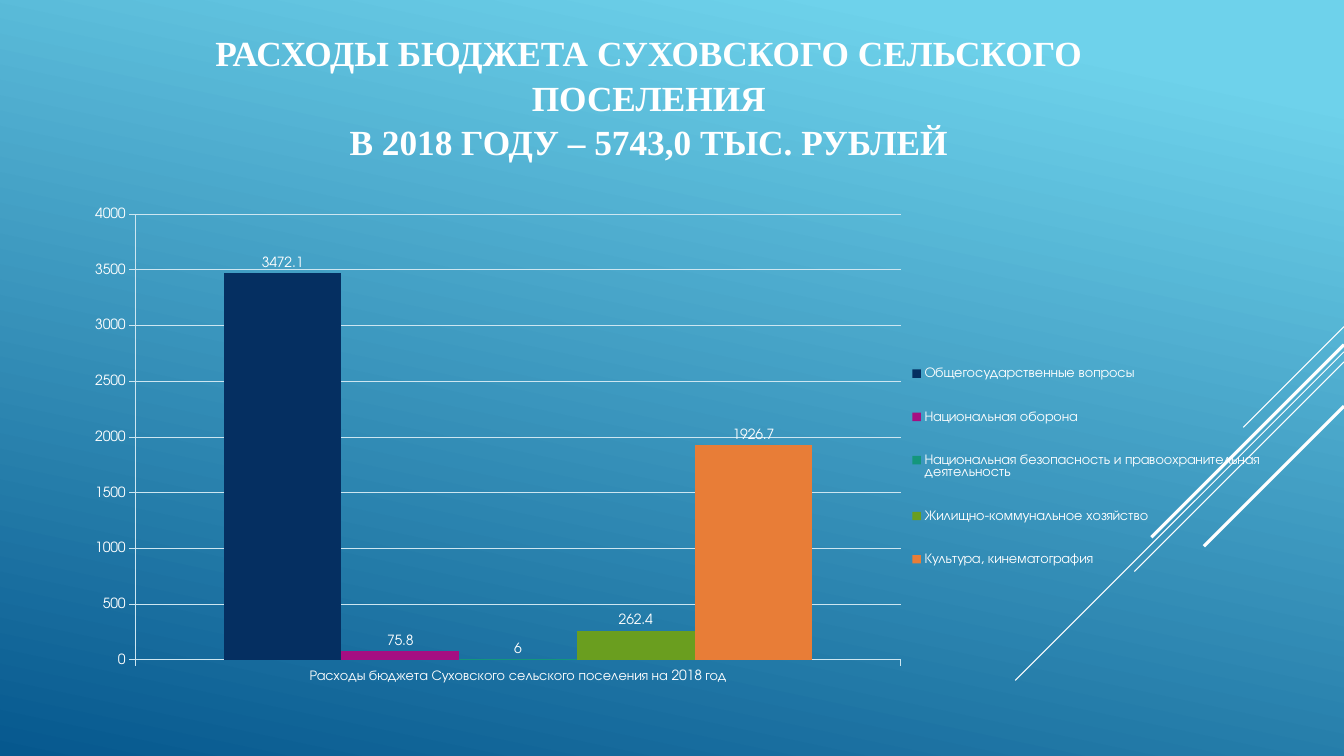
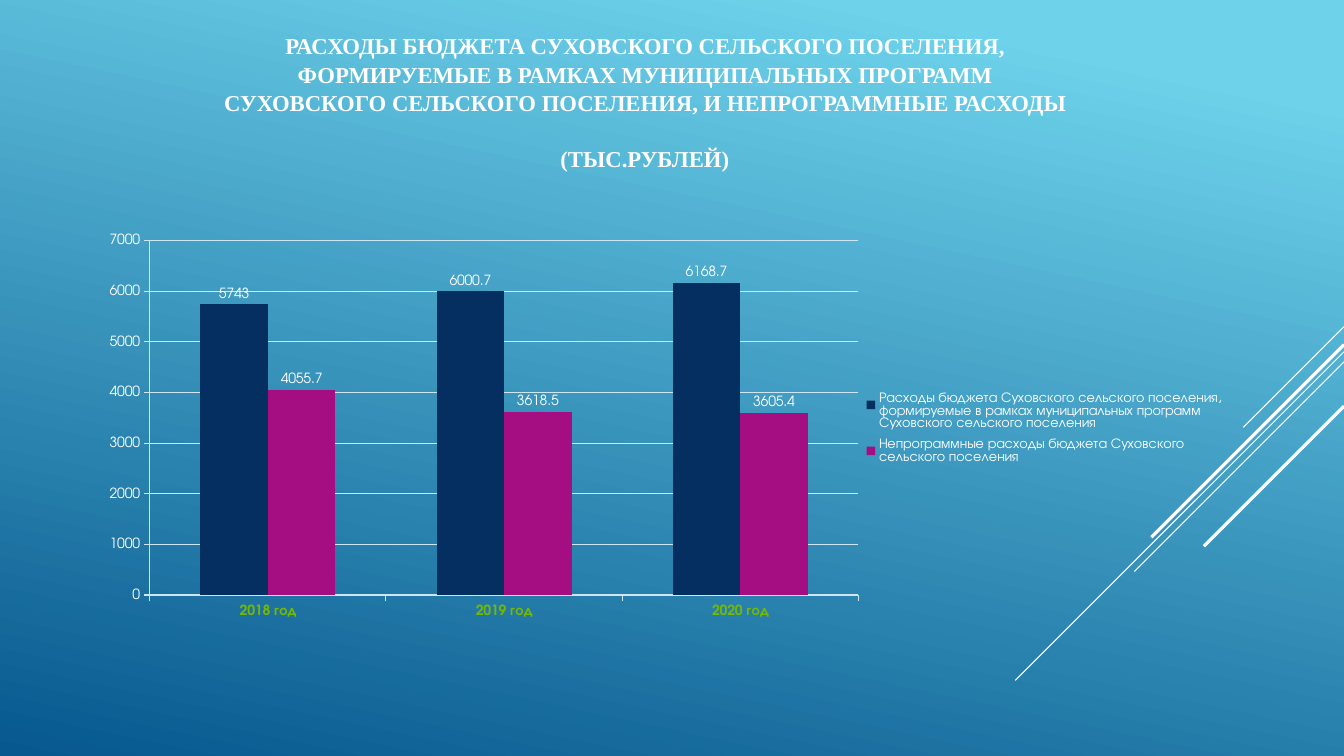
from dataclasses import dataclass

from lxml import etree
from pptx import Presentation
from pptx.chart.data import CategoryChartData
from pptx.dml.color import RGBColor
from pptx.enum import chart as charts, shapes, text
from pptx.oxml.ns import qn
from pptx.util import Inches, Pt


@dataclass(frozen=True)
class Theme:
    width: float = 13.33
    height: float = 7.5
    sky: str = "6ED2EB"
    deep: str = "06588E"
    white: str = "FFFFFF"
    grid: str = "CDE6F1"
    accents: tuple = ("052F61", "A50E82", "14967C", "6A9E1F", "E87D37")
    title_font: str = "Times New Roman"
    chart_font: str = "TeX Gyre Adventor"
    chart_size: float = 10
    title_spacing: float = 1.05


THEME = Theme()

# Diagonals falling at 45° from the right edge: start height, run, line width
DIAGONALS = [(3.24, 1.0, 0.75), (3.49, 3.26, 0.75), (3.59, 2.08, 0.75),
             (3.42, 1.91, 2.25), (4.03, 1.39, 2.25)]

# Content; "plot" and "legend" are x, y, width, height as shares of the chart
SLIDES = [
    {
        "title": ["РАСХОДЫ БЮДЖЕТА СУХОВСКОГО СЕЛЬСКОГО ПОСЕЛЕНИЯ",
                  "В 2018 ГОДУ – 5743,0 ТЫС. РУБЛЕЙ"],
        "title_box": (1.77, 0.67, 9.33, 0.57),
        "title_size": 25.2,
        "last_gap": 0,
        "chart_box": (0.75, 1.98, 11.86, 4.86),
        "plot": (0.05, 0.03, 0.64, 0.91),
        "legend": (0.69, 0.28, 0.31, 0.53),
        "scale": (4000, 500),
        "category_style": (THEME.white, False),
        "categories": ["Расходы бюджета Суховского сельского поселения на 2018 год"],
        "series": [
            ("Общегосударственные вопросы", [3472.1]),
            ("Национальная оборона", [75.8]),
            ("Национальная безопасность и правоохранительная деятельность", [6]),
            ("Жилищно-коммунальное хозяйство", [262.4]),
            ("Культура, кинематография", [1926.7]),
        ],
    },
    {
        "title": ["РАСХОДЫ БЮДЖЕТА СУХОВСКОГО СЕЛЬСКОГО ПОСЕЛЕНИЯ,",
                  "ФОРМИРУЕМЫЕ В РАМКАХ МУНИЦИПАЛЬНЫХ ПРОГРАММ",
                  "СУХОВСКОГО СЕЛЬСКОГО ПОСЕЛЕНИЯ, И НЕПРОГРАММНЫЕ РАСХОДЫ",
                  "(ТЫС.РУБЛЕЙ)"],
        "title_box": (1.73, 0.18, 9.33, 1.65),
        "title_size": 16.2,
        "last_gap": 19.5,
        "chart_box": (0.91, 2.27, 11.52, 3.95),
        "plot": (0.05, 0.03, 0.61, 0.89),
        "legend": (0.66, 0.39, 0.32, 0.22),
        "scale": (7000, 1000),
        "category_style": ("76B900", True),
        "categories": ["2018 год", "2019 год", "2020 год"],
        "series": [
            ("Расходы бюджета Суховского сельского поселения, формируемые в рамках "
             "муниципальных программ Суховского сельского поселения",
             [5743, 6000.7, 6168.7]),
            ("Непрограммные расходы бюджета Суховского сельского поселения",
             [4055.7, 3618.5, 3605.4]),
        ],
    },
]


def rgb(code):
    return RGBColor.from_string(code)


def inches(box):
    return [Inches(length) for length in box]


def style_line(line, color, width=0.75):
    line.color.rgb = rgb(color)
    line.width = Pt(width)


# Shared backdrop, kept on the master
def decorate_master(master, slide):
    fill = master.background.fill
    fill.gradient()
    fill.gradient_angle = 360 - 102
    for stop, color, position in zip(fill.gradient_stops,
                                     (THEME.sky, THEME.deep), (0.1, 1)):
        stop.color.rgb = rgb(color)
        stop.position = position
    for order, (top, run, width) in enumerate(DIAGONALS):
        ends = inches((THEME.width, top, THEME.width - run, top + run))
        diagonal = slide.shapes.add_connector(shapes.MSO_CONNECTOR.STRAIGHT, *ends)
        style_line(diagonal.line, THEME.white, width)
        etree.SubElement(diagonal._element.spPr, qn("a:effectLst"))
        master.shapes._spTree.insert(2 + order, diagonal._element)


# Title placeholder
def write_title(title, content):
    title.left, title.top, title.width, title.height = inches(content["title_box"])
    frame = title.text_frame
    frame.text = "\n".join(content["title"])
    frame.word_wrap = True
    frame.auto_size = text.MSO_AUTO_SIZE.NONE
    frame.vertical_anchor = text.MSO_ANCHOR.MIDDLE
    for line in frame.paragraphs:
        line.alignment = text.PP_ALIGN.CENTER
        line.line_spacing = THEME.title_spacing
        line.space_before = Pt(0)
        line.font.name = THEME.title_font
        line.font.size = Pt(content["title_size"])
        line.font.bold = True
        line.font.color.rgb = rgb(THEME.white)
    frame.paragraphs[-1].space_before = Pt(content["last_gap"])


# Manual layout of the plot area or legend
def place_part(part, index, shares, inner=False):
    for old in part.findall(qn("c:layout")):
        part.remove(old)
    layout = etree.Element(qn("c:layout"))
    manual = etree.SubElement(layout, qn("c:manualLayout"))
    settings = [("layoutTarget", "inner")] if inner else []
    settings += [("xMode", "edge"), ("yMode", "edge")]
    settings += zip("xywh", shares)
    for tag, value in settings:
        etree.SubElement(manual, qn(f"c:{tag}")).set("val", str(value))
    part.insert(index, layout)


# Clustered column chart
def draw_chart(slide, content):
    data = CategoryChartData()
    data.categories = content["categories"]
    for name, values in content["series"]:
        data.add_series(name, values)
    chart = slide.shapes.add_chart(charts.XL_CHART_TYPE.COLUMN_CLUSTERED,
                                   *inches(content["chart_box"]), data).chart
    chart.has_title = False
    chart.font.name = THEME.chart_font
    chart.font.size = Pt(THEME.chart_size)
    chart.font.color.rgb = rgb(THEME.white)

    columns = chart.plots[0]
    columns.gap_width = 150
    columns.overlap = 0
    columns.vary_by_categories = False
    for series, color in zip(columns.series, THEME.accents):
        series.format.fill.solid()
        series.format.fill.fore_color.rgb = rgb(color)
        series.data_labels.show_value = True
        series.data_labels.position = charts.XL_LABEL_POSITION.OUTSIDE_END

    amounts, periods = chart.value_axis, chart.category_axis
    amounts.minimum_scale = 0
    amounts.maximum_scale, amounts.major_unit = content["scale"]
    amounts.has_major_gridlines = True
    style_line(amounts.major_gridlines.format.line, THEME.grid)
    for axis in (amounts, periods):
        axis.major_tick_mark = charts.XL_TICK_MARK.OUTSIDE
        style_line(axis.format.line, THEME.grid)
    color, bold = content["category_style"]
    label_font = periods.tick_labels.font
    label_font.name = THEME.chart_font
    label_font.size = Pt(THEME.chart_size)
    label_font.bold = bold
    label_font.color.rgb = rgb(color)

    chart.has_legend = True
    chart.legend.position = charts.XL_LEGEND_POSITION.RIGHT
    chart.legend.include_in_layout = False
    place_part(chart._chartSpace.chart.plotArea, 0, content["plot"], inner=True)
    place_part(chart.legend._element, 1, content["legend"])


def main():
    prs = Presentation()
    prs.slide_width, prs.slide_height = inches((THEME.width, THEME.height))
    title_only = prs.slide_layouts[5]
    for content in SLIDES:
        slide = prs.slides.add_slide(title_only)
        write_title(slide.shapes.title, content)
        draw_chart(slide, content)
    decorate_master(prs.slide_master, prs.slides[0])
    prs.save("out.pptx")


if __name__ == "__main__":
    main()
